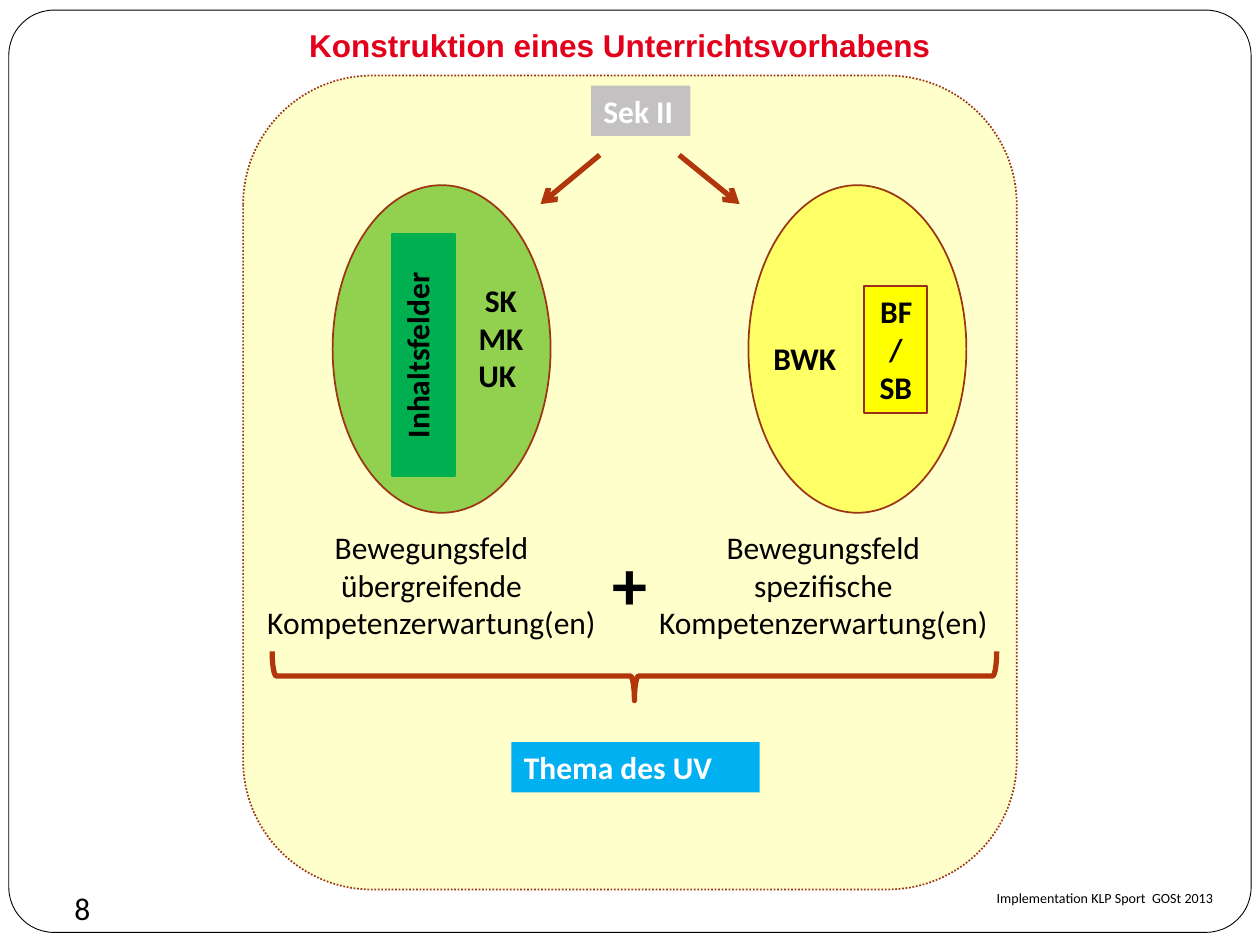
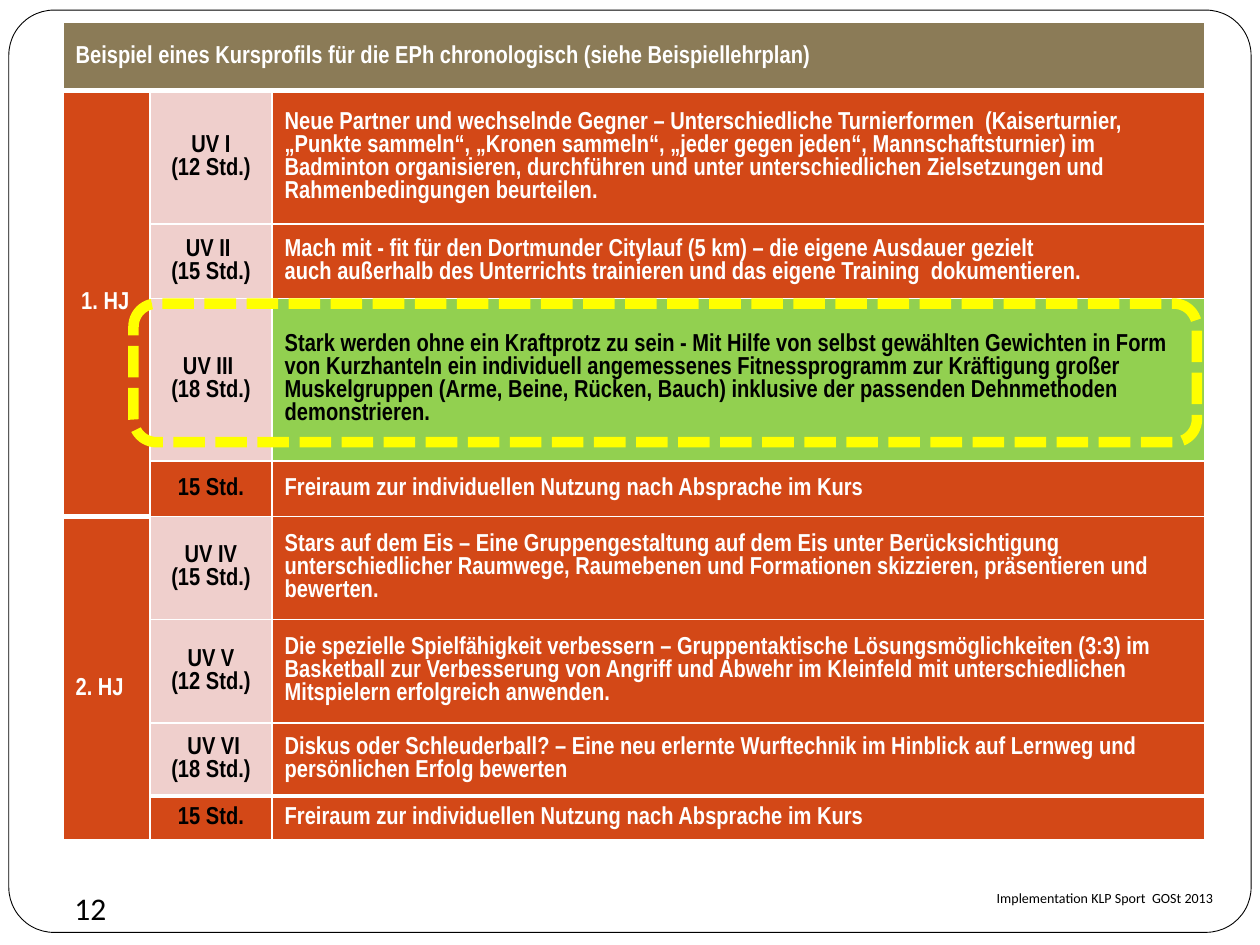
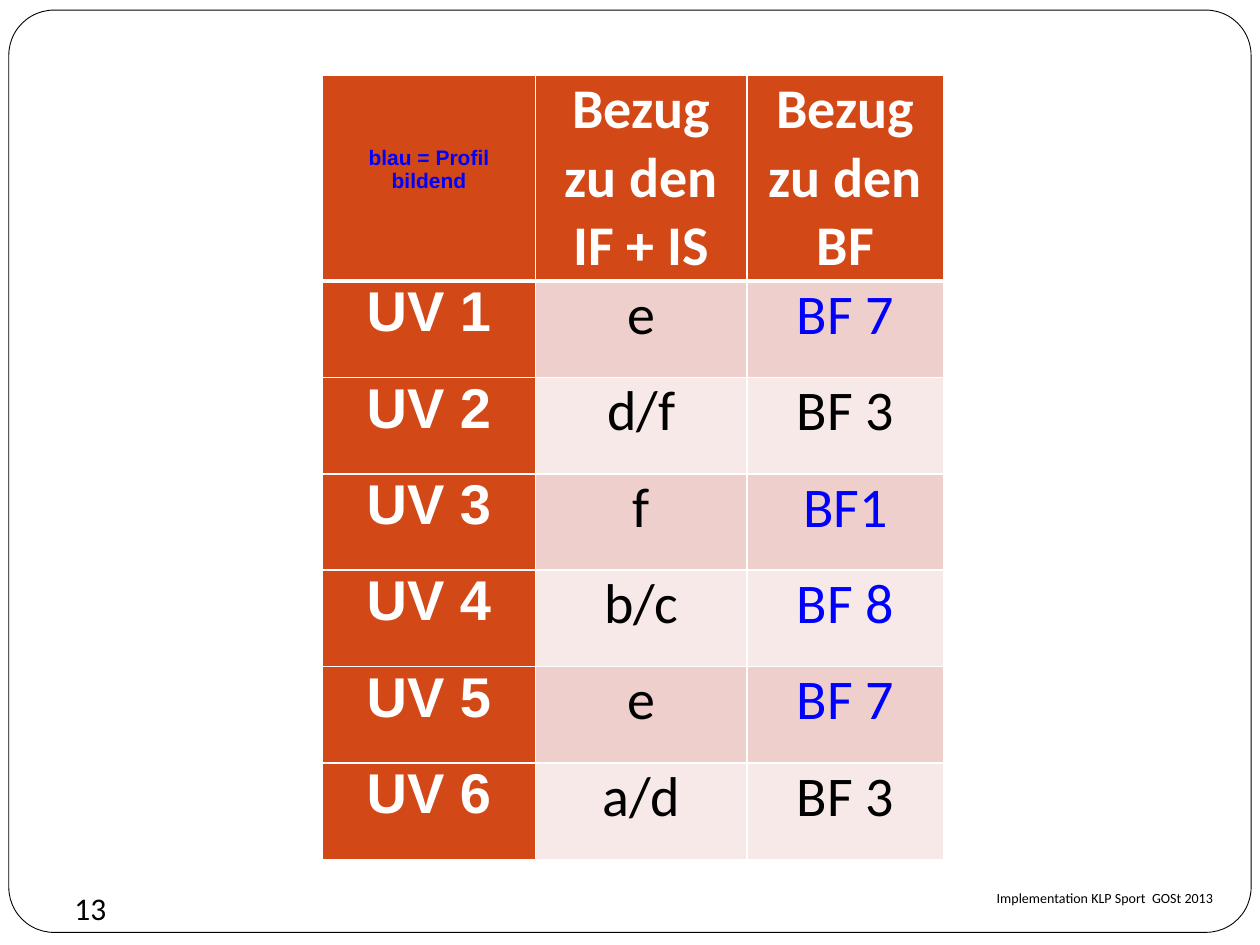
from dataclasses import dataclass
from typing import NamedTuple

from lxml import etree
from pptx import Presentation
from pptx.dml.color import RGBColor
from pptx.enum.dml import MSO_LINE
from pptx.enum.shapes import MSO_CONNECTOR, MSO_SHAPE
from pptx.enum.text import MSO_ANCHOR, PP_ALIGN
from pptx.oxml.ns import qn
from pptx.util import Inches, Pt

COLORS = {
    "white": "FFFFFF",
    "black": "000000",
    "title": "E2001A",
    "cream": "FFFFCC",
    "outline": "9C3511",
    "box_outline": "9B2D1F",
    "rust": "B1360B",
    "gray": "C3C1C1",
    "light_green": "92D050",
    "green": "00B050",
    "light_yellow": "FFFF66",
    "yellow": "FFFF00",
    "sky": "00B0F0",
    "olive": "8B7B57",
    "orange": "D34817",
    "rose": "EFCFCC",
    "pale_rose": "F7E9E8",
    "blue": "0000FF",
}
FOOTER = "Implementation KLP Sport  GOSt 2013"


class Box(NamedTuple):
    left: float
    top: float
    width: float
    height: float

    def lengths(self) -> list:
        return [Inches(value) for value in self]


@dataclass
class Block:
    """A filled or outlined preset shape, with or without text."""
    box: Box
    kind: MSO_SHAPE = MSO_SHAPE.RECTANGLE
    fill: str | None = None
    line: str | None = None
    width: float = 1
    dash: MSO_LINE | None = None
    text: str = ""
    color: str = "black"
    centered: bool = True
    vertical: bool = False
    rotation: int = 0
    adjustment: float | None = None


@dataclass
class Caption:
    box: Box
    text: str
    size: int = 18
    bold: bool = False
    centered: bool = True


class Unit(NamedTuple):
    label: str
    topic: str
    height: float
    label_fill: str = "rose"
    topic_fill: str = "orange"
    topic_color: str = "white"


class Reference(NamedTuple):
    content: str
    field: str
    profile: bool


UNITS = [
    Unit("UV I\n(12 Std.)",
         "Neue Partner und wechselnde Gegner – Unterschiedliche Turnierformen  (Kaiserturnier, "
         "„Punkte sammeln“, „Kronen sammeln“, „jeder gegen jeden“, Mannschaftsturnier) im "
         "Badminton organisieren, durchführen und unter unterschiedlichen Zielsetzungen und  "
         "Rahmenbedingungen beurteilen.", 1.06),
    Unit("UV II \n(15 Std.)",
         "Mach mit - fit für den Dortmunder Citylauf (5 km) – die eigene Ausdauer gezielt\n"
         "auch außerhalb des Unterrichts trainieren und das eigene Training  dokumentieren.", 0.59),
    Unit("UV III \n(18 Std.)",
         "Stark werden ohne ein Kraftprotz zu sein - Mit Hilfe von selbst gewählten Gewichten in "
         "Form von Kurzhanteln ein individuell angemessenes Fitnessprogramm zur Kräftigung großer "
         "Muskelgruppen (Arme, Beine, Rücken, Bauch) inklusive der passenden Dehnmethoden "
         "demonstrieren.", 1.29, topic_fill="light_green", topic_color="black"),
    Unit("15 Std.", "Freiraum zur individuellen Nutzung nach Absprache im Kurs", 0.44, "orange"),
    Unit("UV IV\n(15 Std.)",
         "Stars auf dem Eis – Eine Gruppengestaltung auf dem Eis unter Berücksichtigung\n"
         "unterschiedlicher Raumwege, Raumebenen und Formationen skizzieren, präsentieren und "
         "bewerten.", 0.82),
    Unit("UV V\n(12 Std.)",
         "Die spezielle Spielfähigkeit verbessern – Gruppentaktische Lösungsmöglichkeiten (3:3) im "
         "Basketball zur Verbesserung von Angriff und Abwehr im Kleinfeld mit unterschiedlichen "
         "Mitspielern erfolgreich anwenden.", 0.82),
    Unit(" UV VI\n(18 Std.)",
         "Diskus oder Schleuderball? – Eine neu erlernte Wurftechnik im Hinblick auf Lernweg und "
         "persönlichen Erfolg bewerten", 0.58),
    Unit("15 Std.", "Freiraum zur individuellen Nutzung nach Absprache im Kurs", 0.35, "orange"),
]

REFERENCES = [
    Reference("e", "BF 7", True),
    Reference("d/f", "BF 3", False),
    Reference("f", "BF1", True),
    Reference("b/c", "BF 8", True),
    Reference("e", "BF 7", True),
    Reference("a/d", "BF 3", False),
]


def rgb(name: str) -> RGBColor:
    return RGBColor.from_string(COLORS[name])


def write(frame, text: str, *, size: float = 18, font: str = "Calibri", color: str = "black",
          bold: bool = False, centered: bool = False) -> None:
    """Fill a text frame, one paragraph per line of text."""
    for index, line in enumerate(text.split("\n")):
        paragraph = frame.paragraphs[0] if index == 0 else frame.add_paragraph()
        paragraph.alignment = PP_ALIGN.CENTER if centered else PP_ALIGN.LEFT
        run = paragraph.add_run()
        run.text = line
        run.font.size = Pt(size)
        run.font.name = font
        run.font.bold = bold
        run.font.color.rgb = rgb(color)


def set_margins(target, left: float, top: float, right: float, bottom: float) -> None:
    target.margin_left, target.margin_top = Inches(left), Inches(top)
    target.margin_right, target.margin_bottom = Inches(right), Inches(bottom)


def add_text(slide, box: Box, text: str, margins: tuple | None = None, **text_format) -> None:
    frame = slide.shapes.add_textbox(*box.lengths()).text_frame
    frame.word_wrap = True
    if margins:
        set_margins(frame, *margins)
    write(frame, text, **text_format)


def add_footer_field(slide, box: Box, text: str, size: float) -> None:
    """Write text without margins in an invisible freeform outline."""
    left, top, width, height = box.lengths()
    builder = slide.shapes.build_freeform(left, top)
    builder.add_line_segments(
        [(left + width, top), (left + width, top + height), (left, top + height)])
    field = builder.convert_to_shape()
    field.shadow.inherit = False
    field.fill.background()
    field.line.fill.background()
    frame = field.text_frame
    frame.word_wrap = True
    frame.vertical_anchor = MSO_ANCHOR.TOP
    set_margins(frame, 0, 0, 0, 0)
    write(frame, text, size=size)


def add_block(slide, block: Block) -> None:
    shape = slide.shapes.add_shape(block.kind, *block.box.lengths())
    shape.shadow.inherit = False
    shape.rotation = block.rotation
    if block.adjustment is not None:
        shape.adjustments[0] = block.adjustment
    if block.fill:
        shape.fill.solid()
        shape.fill.fore_color.rgb = rgb(block.fill)
    else:
        shape.fill.background()
    if block.line:
        shape.line.color.rgb = rgb(block.line)
        shape.line.width = Pt(block.width)
        if block.dash:
            shape.line.dash_style = block.dash
    else:
        shape.line.fill.background()
    if block.text:
        frame = shape.text_frame
        frame.word_wrap = True
        frame.vertical_anchor = MSO_ANCHOR.TOP
        if block.vertical:
            shape._element.txBody.find(qn("a:bodyPr")).set("vert", "vert270")
        write(frame, block.text, color=block.color, bold=True, centered=block.centered)


def add_arrow(slide, start: tuple[float, float], end: tuple[float, float]) -> None:
    arrow = slide.shapes.add_connector(
        MSO_CONNECTOR.STRAIGHT, *(Inches(value) for value in start + end))
    arrow.line.color.rgb = rgb("rust")
    arrow.line.width = Pt(3)
    etree.SubElement(arrow.line._get_or_add_ln(), qn("a:tailEnd"), type="arrow")
    etree.SubElement(arrow._element.spPr, qn("a:effectLst"))


def add_grid(slide, left: float, top: float, columns: list[float], rows: list[float]):
    box = Box(left, top, sum(columns), sum(rows))
    table = slide.shapes.add_table(len(rows), len(columns), *box.lengths()).table
    table.first_row = table.horz_banding = False
    for column, width in zip(table.columns, columns):
        column.width = Inches(width)
    for row, height in zip(table.rows, rows):
        row.height = Inches(height)
    return table


def draw_borders(table, thick_above: set[tuple[int, int]]) -> None:
    """Give all cells thin white borders, thick on top of the named cells."""
    for row in range(len(table.rows)):
        for column in range(len(table.columns)):
            cell = table.cell(row, column)
            below = row + (cell.span_height if cell.is_merge_origin else 1)
            widths = {
                "lnL": 1,
                "lnR": 1,
                "lnT": 3 if (row, column) in thick_above else 1,
                "lnB": 3 if (below, column) in thick_above else 1,
            }
            properties = cell._tc.get_or_add_tcPr()
            for side, width in widths.items():
                border = etree.SubElement(properties, qn(f"a:{side}"), w=str(Pt(width)))
                fill = etree.SubElement(border, qn("a:solidFill"))
                etree.SubElement(fill, qn("a:srgbClr"), val=COLORS["white"])


def fill_cell(cell, text: str, fill: str, **text_format) -> None:
    cell.fill.solid()
    cell.fill.fore_color.rgb = rgb(fill)
    write(cell.text_frame, text, **text_format)


def add_base_slide(deck, number: int):
    """Add a slide with the rounded frame, the footer and the slide number."""
    slide = deck.slides.add_slide(deck.slide_layouts[6])
    add_block(slide, Block(Box(0.07, 0.08, 9.86, 7.32), MSO_SHAPE.ROUNDED_RECTANGLE, "white",
                           "black", 0.5, adjustment=0.049))
    add_footer_field(slide, Box(7.91, 7.06, 2.28, 0.37), FOOTER, 8)
    add_footer_field(slide, Box(0.59, 7.06, 0.32, 0.37), str(number), 18)
    return slide


def build_construction(deck) -> None:
    slide = add_base_slide(deck, 8)
    oval = MSO_SHAPE.OVAL
    blocks = [
        Block(Box(1.93, 0.6, 6.14, 6.46), MSO_SHAPE.ROUNDED_RECTANGLE, "cream", "outline",
              dash=MSO_LINE.ROUND_DOT),
        Block(Box(4.69, 0.68, 0.79, 0.4), fill="gray", text="Sek II", color="white",
              centered=False),
        Block(Box(2.64, 1.47, 1.73, 2.6), oval, "light_green", "outline"),
        Block(Box(3.11, 1.86, 0.5, 1.92), fill="green", line="green", text="Inhaltsfelder",
              vertical=True),
        Block(Box(5.94, 1.47, 1.73, 2.6), oval, "light_yellow", "outline"),
        Block(Box(6.86, 2.27, 0.5, 1.01), fill="yellow", line="box_outline", text="BF/ SB"),
        Block(Box(4.84, 2.49, 0.39, 5.75), MSO_SHAPE.RIGHT_BRACE, line="rust", width=3,
              rotation=90),
        Block(Box(4.06, 5.89, 1.97, 0.4), fill="sky", text="Thema des UV", color="white",
              centered=False),
    ]
    captions = [
        Caption(Box(3.58, 2.18, 0.79, 1.01), "SK\nMK\nUK ", bold=True),
        Caption(Box(6.02, 2.64, 0.79, 0.4), "BWK ", bold=True),
        Caption(Box(1.93, 4.14, 2.99, 1.01),
                "Bewegungsfeld übergreifende\nKompetenzerwartung(en)"),
        Caption(Box(4.92, 4.14, 3.23, 1.01),
                "Bewegungsfeld\nspezifische\nKompetenzerwartung(en)"),
        Caption(Box(4.76, 4.24, 0.47, 0.77), "+", 40, bold=True, centered=False),
    ]
    for block in blocks:
        add_block(slide, block)
    for caption in captions:
        add_text(slide, caption.box, caption.text, size=caption.size, bold=caption.bold,
                 centered=caption.centered)
    add_text(slide, Box(0.51, 0.05, 8.82, 0.46), "Konstruktion eines Unterrichtsvorhabens",
             (0, 0.16, 0, 0), font="Arial", color="title", bold=True, centered=True)
    add_arrow(slide, (4.76, 1.23), (4.29, 1.62))
    add_arrow(slide, (5.39, 1.23), (5.87, 1.62))


def build_course_profile(deck) -> None:
    slide = add_base_slide(deck, 12)
    profile = add_grid(slide, 0.5, 0.18, [0.69, 0.97, 7.4],
                       [0.54] + [unit.height for unit in UNITS])
    profile.cell(0, 0).merge(profile.cell(0, 2))
    for first_row in (1, 5):
        profile.cell(first_row, 0).merge(profile.cell(first_row + 3, 0))
    draw_borders(profile, {(1, 0), (1, 1), (1, 2), (5, 0), (8, 1), (8, 2)})

    def put(row: int, column: int, text: str, fill: str, color: str = "white",
            centered: bool = False) -> None:
        cell = profile.cell(row, column)
        cell.vertical_anchor = MSO_ANCHOR.MIDDLE
        fill_cell(cell, text, fill, size=14, font="Arial Narrow", color=color, bold=True,
                  centered=centered)

    put(0, 0, "Beispiel eines Kursprofils für die EPh chronologisch (siehe Beispiellehrplan)",
        "olive")
    put(1, 0, " 1. HJ", "orange")
    put(5, 0, "2. HJ", "orange")
    profile.cell(5, 0).margin_top = Inches(0.23)
    for row, unit in enumerate(UNITS, start=1):
        put(row, 1, unit.label, unit.label_fill, "black", centered=True)
        put(row, 2, unit.topic, unit.topic_fill, unit.topic_color)
    add_block(slide, Block(Box(1.06, 2.41, 8.44, 1.1), MSO_SHAPE.ROUNDED_RECTANGLE,
                           line="yellow", width=6, dash=MSO_LINE.SQUARE_DOT))


def build_references(deck) -> None:
    slide = add_base_slide(deck, 13)
    references = add_grid(slide, 2.56, 0.6, [1.69, 1.68, 1.56],
                          [1.63] + [0.765] * len(REFERENCES))
    draw_borders(references, {(1, column) for column in range(3)})

    def put(row: int, column: int, text: str, fill: str, color: str = "white", size: int = 32,
            font: str = "Calibri", bold: bool = True) -> None:
        cell = references.cell(row, column)
        set_margins(cell, 0.07, 0, 0.07, 0)
        fill_cell(cell, text, fill, size=size, font=font, color=color, bold=bold, centered=True)

    put(0, 0, "blau = Profil bildend", "orange", "blue", 12, "Arial")
    references.cell(0, 0).margin_top = Inches(0.56)
    put(0, 1, "Bezug zu den IF + IS", "orange")
    put(0, 2, "Bezug zu den BF", "orange")
    for row, reference in enumerate(REFERENCES, start=1):
        band = "rose" if row % 2 else "pale_rose"
        put(row, 0, f"UV {row}", "orange", font="Arial")
        put(row, 1, reference.content, band, "black", bold=False)
        put(row, 2, reference.field, band, "blue" if reference.profile else "black", bold=False)


def main() -> None:
    deck = Presentation()
    deck.slide_width, deck.slide_height = Inches(10), Inches(7.5)
    build_construction(deck)
    build_course_profile(deck)
    build_references(deck)
    deck.save("out.pptx")


if __name__ == "__main__":
    main()
